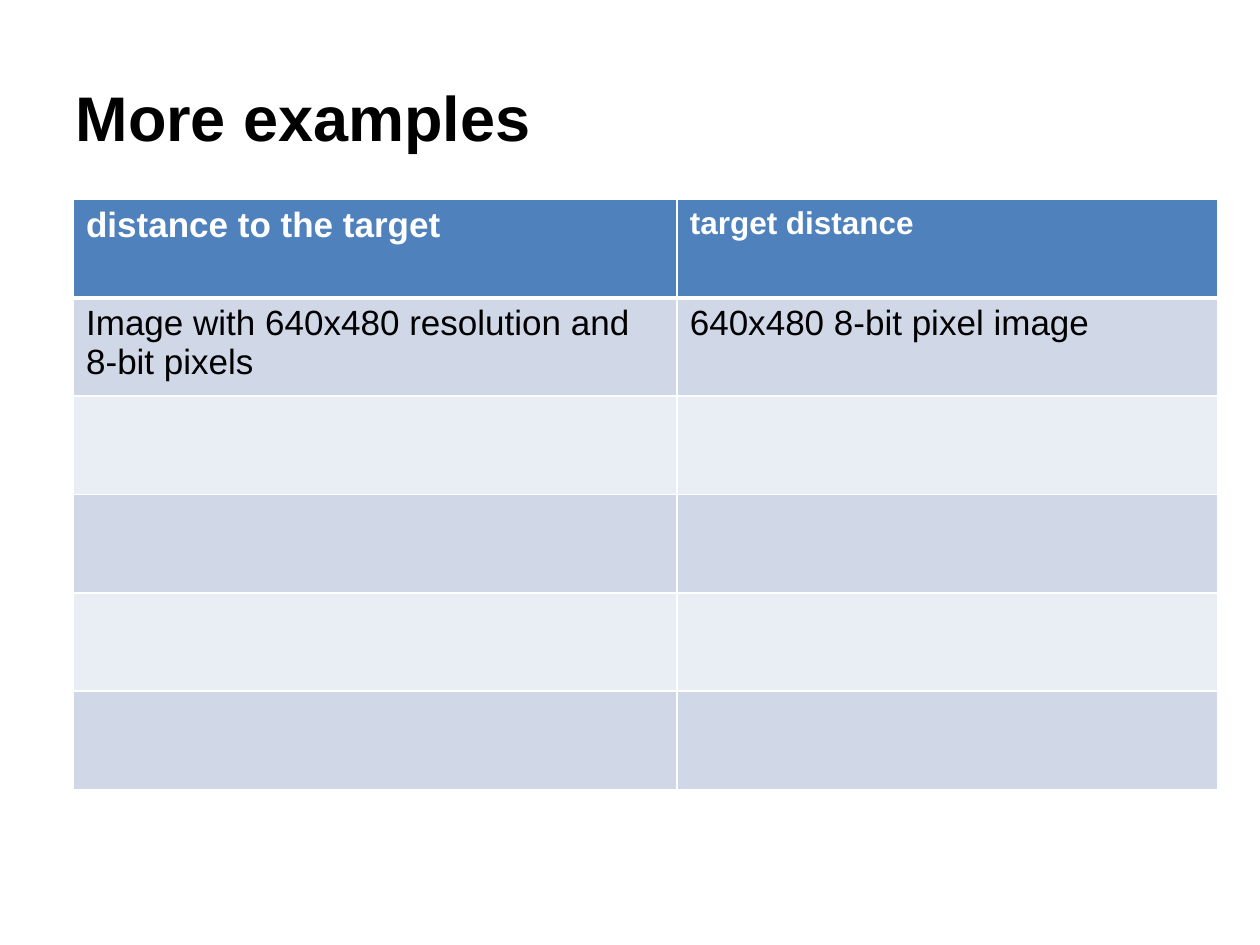
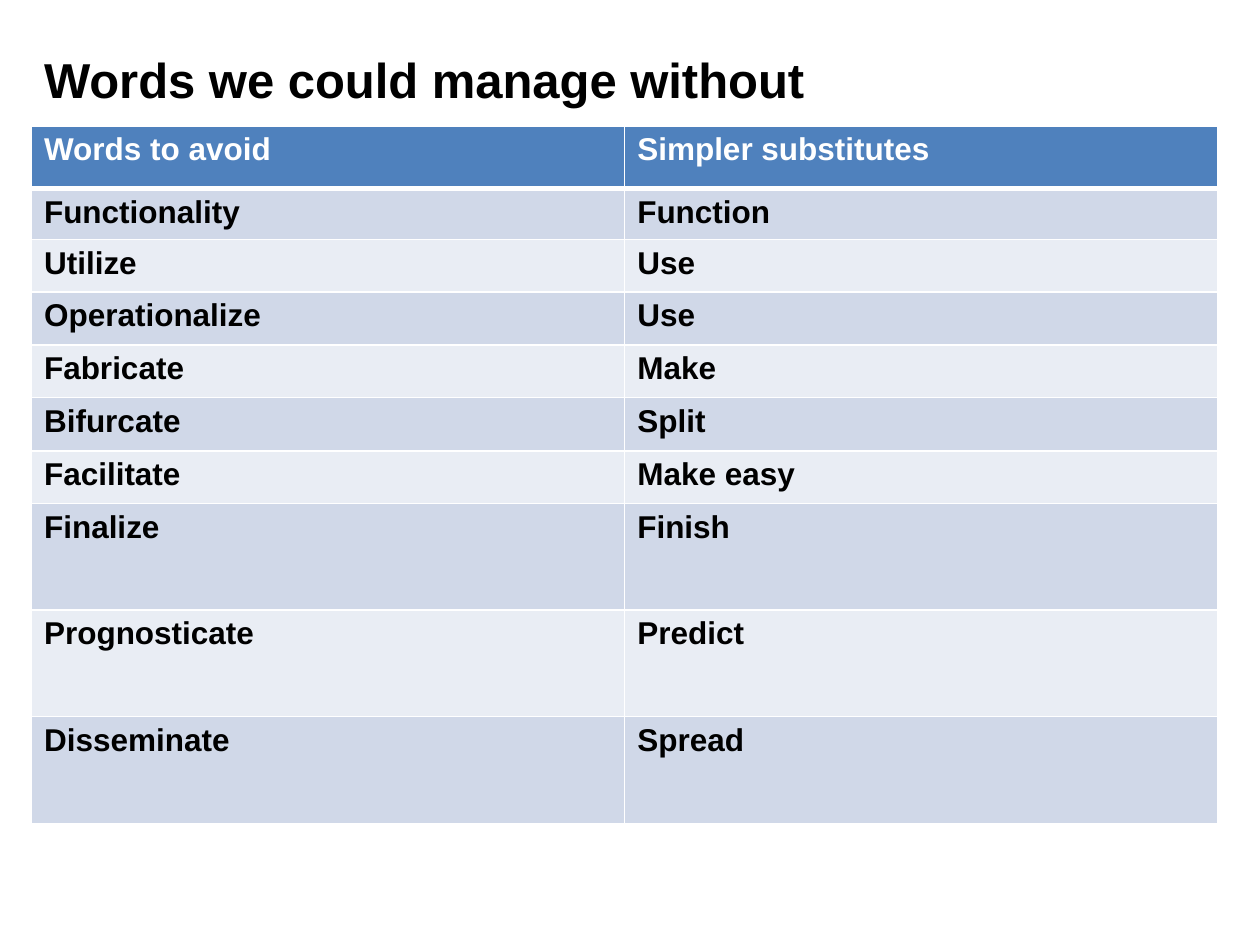
"""Build two slides that compare wordy phrases with simpler ones."""
from lxml import etree
from pptx import Presentation
from pptx import util as u
from pptx.dml.color import RGBColor
from pptx.enum import text
from pptx.oxml import ns

FONT = "Arial"
BLACK, WHITE = "000000", "FFFFFF"
HEADER_FILL = "4F81BD"
BAND_FILLS = ("D0D8E8", "E9EDF4")
THIN, THICK = 1, 3

EXAMPLES = [
    ("distance to the target", "target distance"),
    ("Image with 640x480 resolution and 8-bit pixels", "640x480 8-bit pixel image"),
] + [("", "")] * 4

SUBSTITUTES = [
    ("Words to avoid", "Simpler substitutes"),
    ("Functionality", "Function"),
    ("Utilize", "Use"),
    ("Operationalize", "Use"),
    ("Fabricate", "Make"),
    ("Bifurcate", "Split"),
    ("Facilitate", "Make easy"),
    ("Finalize", "Finish"),
    ("Prognosticate", "Predict"),
    ("Disseminate", "Spread"),
]


def colour(hex_value):
    """Turn a hex string into a colour."""
    return RGBColor.from_string(hex_value)


def style_paragraph(para, size, hex_value, bold):
    """Set the font of a whole paragraph."""
    para.font.name = FONT
    para.font.size = u.Pt(size)
    para.font.bold = bold
    para.font.color.rgb = colour(hex_value)


def add_title(page, box, wording, size):
    """Place the title placeholder in its box."""
    title = page.shapes.title
    title.left, title.top, title.width, title.height = map(u.Pt, box)
    frame = title.text_frame
    frame.text = wording
    frame.word_wrap = True
    frame.auto_size = text.MSO_AUTO_SIZE.NONE
    frame.vertical_anchor = text.MSO_ANCHOR.MIDDLE
    para = frame.paragraphs[0]
    para.alignment = text.PP_ALIGN.LEFT
    style_paragraph(para, size, BLACK, True)


def add_borders(cell, top, bottom):
    """Draw white lines round a cell."""
    properties = cell._tc.get_or_add_tcPr()
    for side, width in (("L", THIN), ("R", THIN), ("T", top), ("B", bottom)):
        line = etree.SubElement(properties, ns.qn(f"a:ln{side}"), w=str(u.Pt(width)))
        fill = etree.SubElement(line, ns.qn("a:solidFill"))
        etree.SubElement(fill, ns.qn("a:srgbClr"), val=WHITE)


def add_word_table(page, corner, widths, heights, rows, header_sizes, body_size, body_bold):
    """Place a two-column table with a header and banded rows."""
    frame = page.shapes.add_table(len(rows), len(widths), *map(u.Pt, corner),
                                  u.Pt(sum(widths)), u.Pt(sum(heights)))
    table = frame.table
    table.first_row = table.horz_banding = False
    for column, width in zip(table.columns, widths):
        column.width = u.Pt(width)
    for row_index, (height, wordings) in enumerate(zip(heights, rows)):
        table.rows[row_index].height = u.Pt(height)
        header = row_index == 0
        for column_index, wording in enumerate(wordings):
            cell = table.cell(row_index, column_index)
            add_borders(cell, THICK if row_index == 1 else THIN, THICK if header else THIN)
            cell.fill.solid()
            fill = HEADER_FILL if header else BAND_FILLS[(row_index - 1) % 2]
            cell.fill.fore_color.rgb = colour(fill)
            cell.text = wording
            style_paragraph(cell.text_frame.paragraphs[0],
                            header_sizes[column_index] if header else body_size,
                            WHITE if header else BLACK, header or body_bold)


def add_examples_page(deck):
    """Add the slide with further examples."""
    page = deck.slides.add_slide(deck.slide_layouts[5])
    add_title(page, (36, 21.6, 648, 90), "More examples", 36)
    add_word_table(page, (42, 114), (345, 309), [56.2] * len(EXAMPLES),
                   EXAMPLES, (20, 18), 20, False)


def add_substitutes_page(deck):
    """Add the slide that lists words to avoid."""
    page = deck.slides.add_slide(deck.slide_layouts[5])
    add_title(page, (18, 0, 648, 90), "Words we could manage without", 28)
    heights = [35.8, 29.1, 30, 30.2, 30, 30.6, 30] + [61] * 3
    add_word_table(page, (18, 72), (339, 339), heights, SUBSTITUTES, (18, 18), 18, True)


def main():
    """Build and save the deck."""
    deck = Presentation()
    deck.slide_width, deck.slide_height = u.Pt(720), u.Pt(540)
    add_examples_page(deck)
    add_substitutes_page(deck)
    deck.save("out.pptx")


if __name__ == "__main__":
    main()
